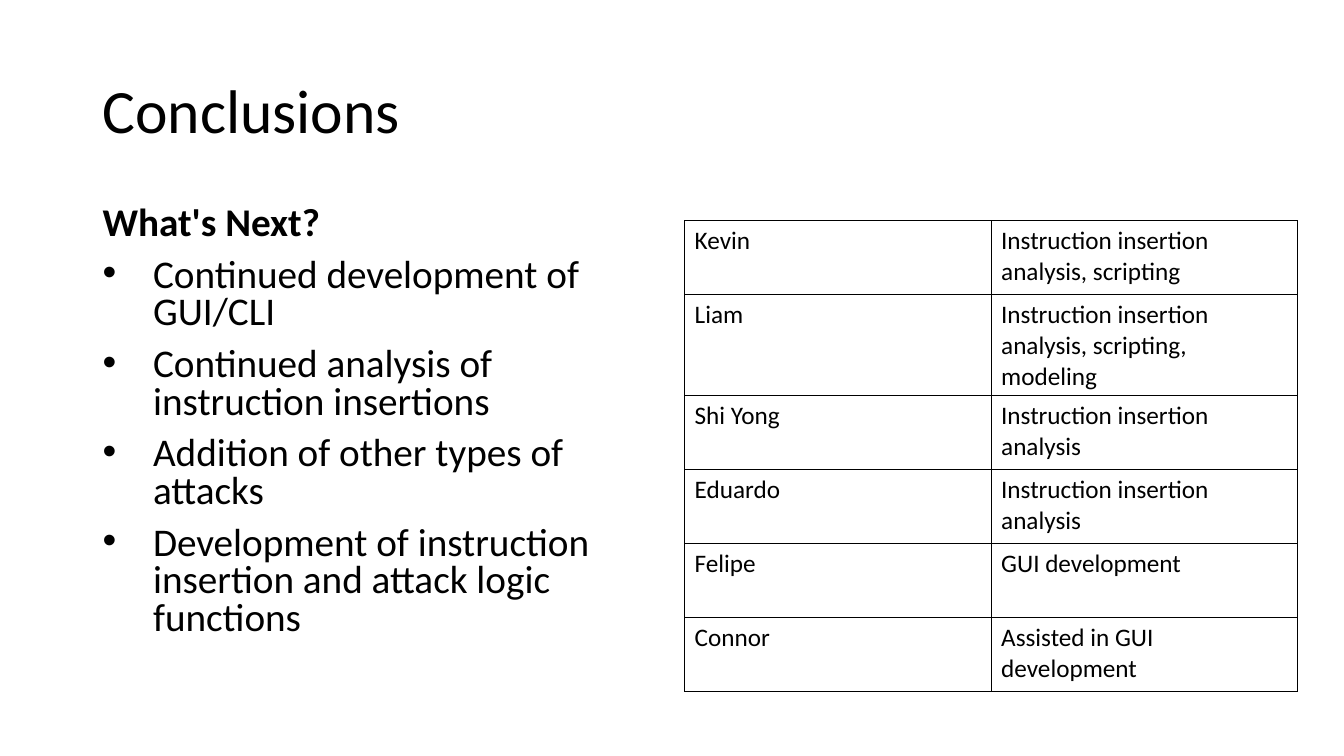
"""Build the Conclusions slide: next steps on the left, a table of who did what on the right."""
from lxml.etree import SubElement
from pptx import Presentation
from pptx.dml.color import RGBColor
from pptx.enum.text import MSO_ANCHOR
from pptx.oxml.ns import qn
from pptx.util import Inches, Pt

BLACK = RGBColor(0, 0, 0)
FONT = "Calibri"
STEPS = [
    "Continued development of GUI/CLI",
    "Continued analysis of instruction insertions",
    "Addition of other types of attacks",
    "Development of instruction insertion and attack logic functions",
]
TASKS = [
    ("Kevin", "Instruction insertion analysis, scripting"),
    ("Liam", "Instruction insertion analysis, scripting, modeling"),
    ("Shi Yong", "Instruction insertion analysis"),
    ("Eduardo", "Instruction insertion analysis"),
    ("Felipe", "GUI development"),
    ("Connor", "Assisted in GUI development"),
]


def style(para, size, bold=False):
    font = para.font
    font.name, font.size, font.bold = FONT, Pt(size), bold
    font.color.rgb = BLACK


def add_box(left, top, width, height):
    box = slide.shapes.add_textbox(Inches(left), Inches(top), Inches(width), Inches(height))
    box.text_frame.word_wrap = True
    return box.text_frame


deck = Presentation()
deck.slide_width, deck.slide_height = Inches(13.33), Inches(7.5)
slide = deck.slides.add_slide(deck.slide_layouts[6])

title = add_box(0.92, 0.4, 11.5, 1.45)
title.vertical_anchor = MSO_ANCHOR.MIDDLE
head = title.paragraphs[0]
head.text = "Conclusions"
head.line_spacing = 0.9
style(head, 44)

body = add_box(0.92, 2, 5.79, 4.76)
body.text = "\n".join(["What's Next?"] + STEPS)
for num, para in enumerate(body.paragraphs):
    para.line_spacing = 0.8
    para.space_before = Pt(10)
    style(para, 28, bold=num == 0)
    if num > 0:
        props = para._p.get_or_add_pPr()
        props.set("marL", str(Inches(0.5)))
        props.set("indent", str(-Inches(0.5)))
        SubElement(props, qn("a:buFont")).set("typeface", "Arial")
        SubElement(props, qn("a:buChar")).set("char", "•")
        props.append(props.find(qn("a:defRPr")))

wide, high = Inches(3.04), Inches(0.735)
frame = slide.shapes.add_table(
    len(TASKS), 2, Inches(6.79), Inches(2.19), 2 * wide, len(TASKS) * high
)
table = frame.table
table.first_row = table.horz_banding = False
for row, task in zip(table.rows, TASKS):
    row.height = high
    for cell, text in zip(row.cells, task):
        cell.text = text
        style(cell.text_frame.paragraphs[0], 18)
        props = cell._tc.get_or_add_tcPr()
        for side in "LRTB":
            line = SubElement(props, qn("a:ln" + side), w=str(Pt(1)))
            fill = SubElement(line, qn("a:solidFill"))
            SubElement(fill, qn("a:srgbClr"), val=str(BLACK))
        cell.fill.background()

deck.save("out.pptx")
